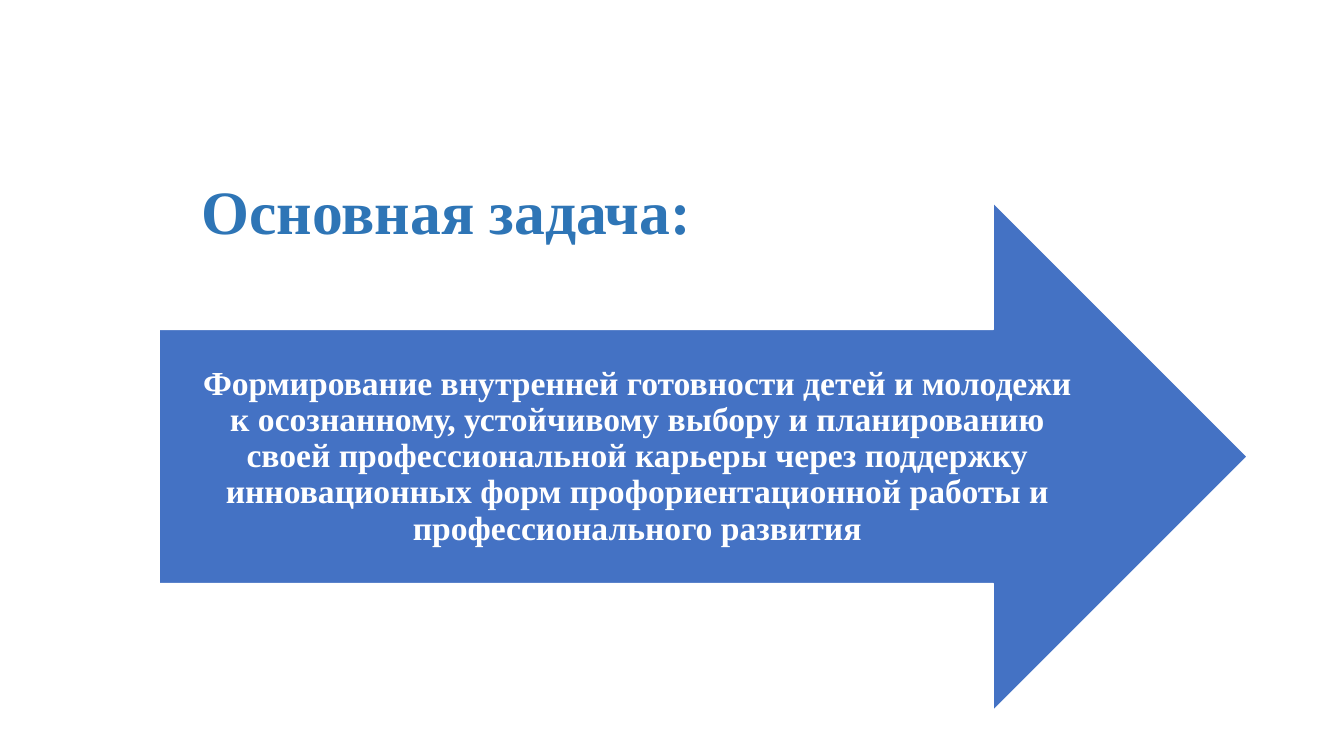
from pptx import Presentation
from pptx.dml.color import RGBColor
from pptx.enum.shapes import MSO_SHAPE
from pptx.enum.text import MSO_ANCHOR, PP_ALIGN
from pptx.util import Inches, Pt

WHITE = RGBColor(0xFF, 0xFF, 0xFF)
ARROW_BLUE = RGBColor(0x44, 0x72, 0xC4)
TITLE_BLUE = RGBColor(0x2E, 0x75, 0xB6)
RIGHT_ARROW = MSO_SHAPE.RIGHT_ARROW
MIDDLE = MSO_ANCHOR.MIDDLE
LEFT = PP_ALIGN.LEFT
CENTER = PP_ALIGN.CENTER

TITLE = "Основная задача:"
TASK = (
    "Формирование внутренней готовности детей и молодежи к осознанному, "
    "устойчивому выбору и планированию своей профессиональной карьеры через "
    "поддержку инновационных форм профориентационной работы и "
    "профессионального развития"
)


class SlideBuilder:
    font_name = "Times New Roman"
    line_spacing = 0.9

    def __init__(self, slide):
        self.slide = slide

    def add_arrow(self, left, top, width, height):
        shape = self.slide.shapes.add_shape(
            RIGHT_ARROW, Inches(left), Inches(top), Inches(width), Inches(height)
        )
        shape.shadow.inherit = False
        shape.fill.solid()
        shape.fill.fore_color.rgb = ARROW_BLUE
        shape.line.color.rgb = WHITE
        shape.line.width = Pt(1)

    def add_text(self, text, left, top, width, height, size, color,
                 alignment=LEFT, side_inset=0.1, vertical_inset=0.05):
        text_box = self.slide.shapes.add_textbox(
            Inches(left), Inches(top), Inches(width), Inches(height)
        )
        frame = text_box.text_frame
        frame.word_wrap = True
        frame.vertical_anchor = MIDDLE
        frame.margin_left = frame.margin_right = Inches(side_inset)
        frame.margin_top = frame.margin_bottom = Inches(vertical_inset)
        paragraph = frame.paragraphs[0]
        paragraph.alignment = alignment
        paragraph.line_spacing = self.line_spacing
        run = paragraph.add_run()
        run.text = text
        run.font.name = self.font_name
        run.font.size = Pt(size)
        run.font.bold = True
        run.font.color.rgb = color


def main():
    presentation = Presentation()
    presentation.slide_width = Inches(13.33)
    presentation.slide_height = Inches(7.5)
    slide = presentation.slides.add_slide(presentation.slide_layouts[6])
    builder = SlideBuilder(slide)
    builder.add_text(TITLE, 1.9, 1.17, 5.79, 1.92, 44, TITLE_BLUE)
    builder.add_arrow(1.58, 2.01, 10.79, 5.04)
    builder.add_text(TASK, 1.9, 3.27, 8.84, 2.52, 24, WHITE,
                     alignment=CENTER, side_inset=0, vertical_inset=0.27)
    presentation.save("out.pptx")


if __name__ == "__main__":
    main()
